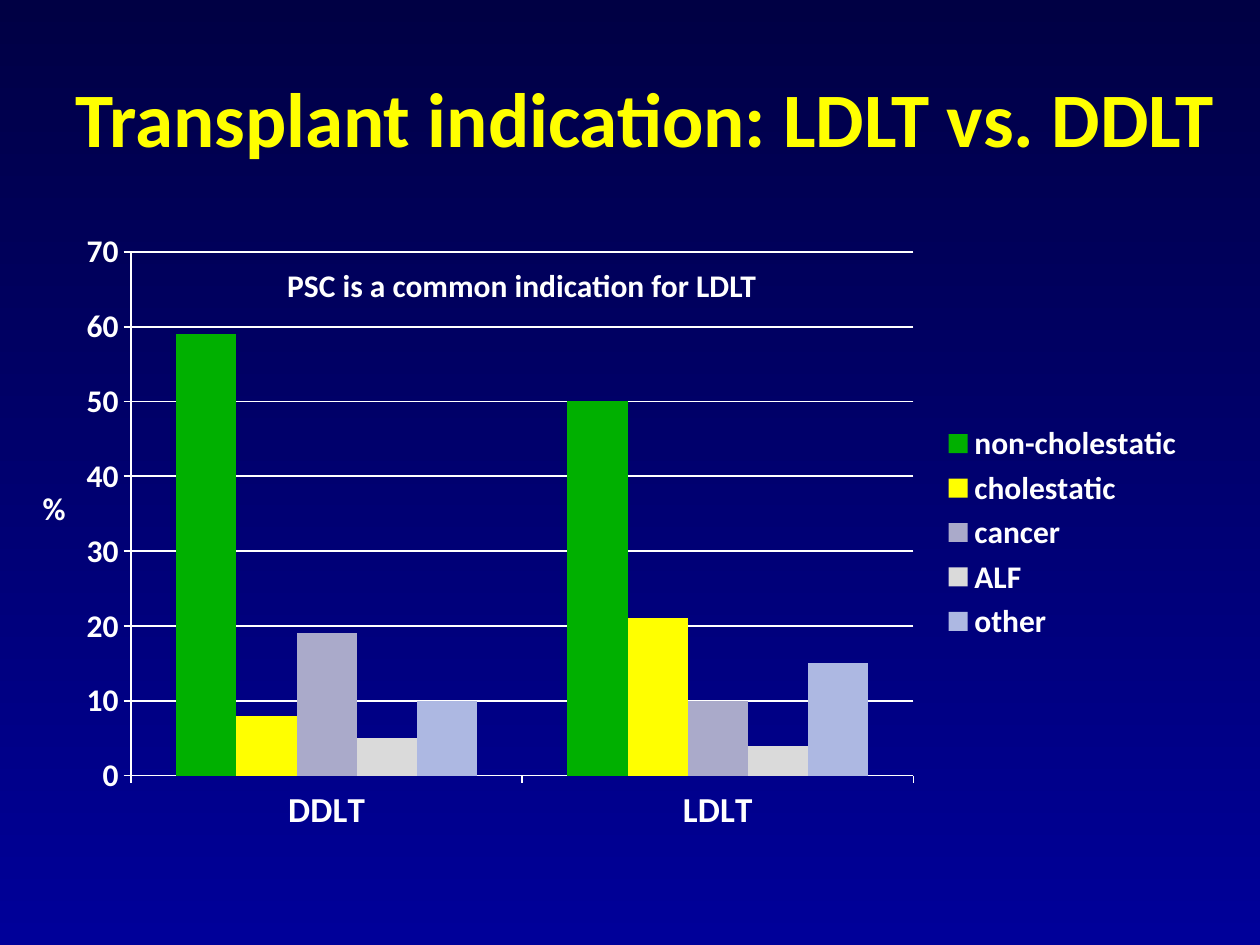
"""Build a slide comparing transplant indications for LDLT and DDLT."""
import dataclasses

import pptx
import pptx.chart.data
import pptx.dml.color
import pptx.enum.chart
import pptx.enum.text
import pptx.oxml
import pptx.oxml.ns
import pptx.util
from pptx.util import Cm


@dataclasses.dataclass(frozen=True)
class Theme:
    """Colours, font and type sizes."""
    font: str = "Calibri"
    top: str = "000044"
    bottom: str = "000099"
    title: str = "FFFF00"
    text: str = "FFFFFF"
    title_size: int = 44
    category_size: int = 20
    body_size: int = 18
    line_width: float = 1


THEME = Theme()
CATEGORIES = ["DDLT", "LDLT"]
INDICATIONS = [
    ("non-cholestatic", (59, 50), "00B000"),
    ("cholestatic", (8, 21), "FFFF00"),
    ("cancer", (19, 10), "AAAACA"),
    ("ALF", (5, 4), "DADADA"),
    ("other", (10, 15), "ADB8E2"),
]


def rgb(value):
    """Return a colour from its hex code."""
    return pptx.dml.color.RGBColor.from_string(value)


def style_font(font, size, color=THEME.text):
    """Set a bold font in the theme's typeface."""
    font.name = THEME.font
    font.size = pptx.util.Pt(size)
    font.bold = True
    font.color.rgb = rgb(color)


def paint_background(slide):
    """Fill the slide with a vertical gradient."""
    fill = slide.background.fill
    fill.gradient()
    fill.gradient_angle = 270
    for stop, color in zip(fill.gradient_stops, (THEME.top, THEME.bottom)):
        stop.color.rgb = rgb(color)


def add_text(slide, text, place, size, color=THEME.text, wrap=False):
    """Add a one-paragraph text box."""
    box = slide.shapes.add_textbox(*map(Cm, place))
    frame = box.text_frame
    frame.text = text
    frame.word_wrap = wrap
    frame.vertical_anchor = pptx.enum.text.MSO_ANCHOR.MIDDLE
    style_font(frame.paragraphs[0].runs[0].font, size, color)


def style_line(line):
    """Draw a chart line in the text colour."""
    line.color.rgb = rgb(THEME.text)
    line.width = pptx.util.Pt(THEME.line_width)


def style_axis(axis, size):
    """Format an axis with outside ticks."""
    axis.major_tick_mark = pptx.enum.chart.XL_TICK_MARK.OUTSIDE
    style_font(axis.tick_labels.font, size)
    style_line(axis.format.line)


def place_plot(chart, x, y, w, h):
    """Fix the inner plot area as fractions of the chart."""
    modes = '<c:layoutTarget val="inner"/><c:xMode val="edge"/><c:yMode val="edge"/>'
    sizes = f'<c:x val="{x}"/><c:y val="{y}"/><c:w val="{w}"/><c:h val="{h}"/>'
    layout = pptx.oxml.parse_xml(
        f'<c:layout {pptx.oxml.ns.nsdecls("c")}>'
        f'<c:manualLayout>{modes}{sizes}</c:manualLayout></c:layout>')
    area = chart.plots[0]._element.getparent()
    for old in area.findall(pptx.oxml.ns.qn("c:layout")):
        area.remove(old)
    area.insert(0, layout)


def add_indication_chart(slide, place):
    """Add the clustered column chart of indications."""
    data = pptx.chart.data.CategoryChartData()
    data.categories = CATEGORIES
    for name, values, _ in INDICATIONS:
        data.add_series(name, values)
    kind = pptx.enum.chart.XL_CHART_TYPE.COLUMN_CLUSTERED
    chart = slide.shapes.add_chart(kind, *map(Cm, place), data).chart
    chart.has_title = False
    style_font(chart.font, THEME.body_size)
    plot = chart.plots[0]
    plot.gap_width = 150
    plot.overlap = 0
    plot.vary_by_categories = False
    for series, (_, _, color) in zip(plot.series, INDICATIONS):
        series.format.fill.solid()
        series.format.fill.fore_color.rgb = rgb(color)
    style_axis(chart.category_axis, THEME.category_size)
    values = chart.value_axis
    style_axis(values, THEME.body_size)
    values.minimum_scale, values.maximum_scale, values.major_unit = 0, 70, 10
    values.has_major_gridlines = True
    style_line(values.major_gridlines.format.line)
    chart.has_legend = True
    chart.legend.position = pptx.enum.chart.XL_LEGEND_POSITION.RIGHT
    chart.legend.include_in_layout = False
    style_font(chart.legend.font, THEME.body_size)
    place_plot(chart, 0.06, 0.05, 0.69, 0.84)


def main():
    """Build and save the deck."""
    deck = pptx.Presentation()
    deck.slide_width, deck.slide_height = Cm(25.4), Cm(19.05)
    slide = deck.slides.add_slide(deck.slide_layouts[6])
    paint_background(slide)
    add_text(slide, "Transplant indication: LDLT vs. DDLT", (1.27, 0.76, 24.13, 3.18),
             THEME.title_size, THEME.title, wrap=True)
    add_indication_chart(slide, (1.27, 4.45, 22.86, 12.57))
    add_text(slide, "%", (0.61, 9.73, 0.99, 1.02), THEME.body_size)
    add_text(slide, "PSC is a common indication for LDLT", (5.54, 5.23, 10.06, 1.02),
             THEME.body_size)
    deck.save("out.pptx")


if __name__ == "__main__":
    main()
